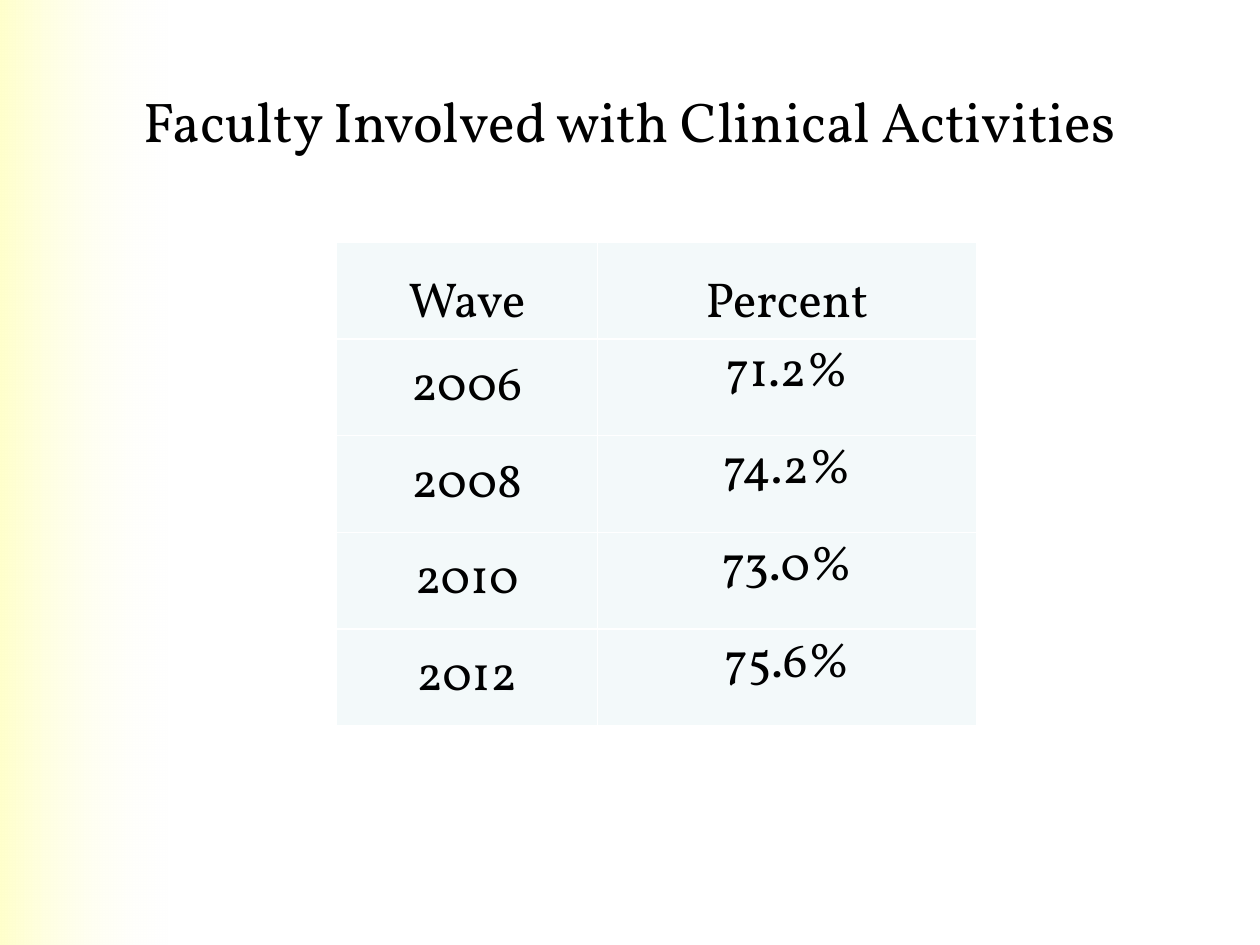
from dataclasses import dataclass

from lxml.etree import SubElement
from pptx import Presentation
from pptx.dml.color import RGBColor
from pptx.enum.shapes import MSO_SHAPE
from pptx.enum.text import MSO_ANCHOR, PP_ALIGN
from pptx.oxml.ns import qn
from pptx.util import Cm, Pt


@dataclass(frozen=True)
class Theme:
    font: str = "Vollkorn"
    ink: str = "000000"
    cell: str = "F3F9FA"
    rule: str = "FFFFFF"
    glow: str = "FFFFCC"
    fade: str = "FFFFF4"
    title: int = 32
    body: int = 28


class Page:
    """Draws styled elements on one slide."""

    def __init__(self, slide, theme):
        self.slide = slide
        self.theme = theme

    def label(self, frame, text, size):
        frame.text = text
        line = frame.paragraphs[0]
        line.alignment = PP_ALIGN.CENTER
        line.font.name = self.theme.font
        line.font.size = Pt(size)
        line.font.color.rgb = RGBColor.from_string(self.theme.ink)

    def band(self, left, top, width, height):
        shape = self.slide.shapes.add_shape(
            MSO_SHAPE.RECTANGLE, Cm(left), Cm(top), Cm(width), Cm(height))
        shape.shadow.inherit = False
        shape.line.fill.background()
        shape.fill.gradient()
        shape.fill.gradient_angle = 0
        for stop, color in zip(shape.fill.gradient_stops, (self.theme.glow, self.theme.fade)):
            stop.color.rgb = RGBColor.from_string(color)
        last = list(shape.element.spPr.iter(qn("a:srgbClr")))[-1]
        SubElement(last, qn("a:alpha"), val="0")

    def title(self, text, left, top, width, height):
        frame = self.slide.shapes.add_textbox(
            Cm(left), Cm(top), Cm(width), Cm(height)).text_frame
        frame.word_wrap = True
        frame.vertical_anchor = MSO_ANCHOR.MIDDLE
        self.label(frame, text, self.theme.title)

    def border(self, cell):
        props = cell._tc.get_or_add_tcPr()
        for side in ("lnL", "lnR", "lnT", "lnB"):
            edge = SubElement(props, qn(f"a:{side}"), w=str(Pt(1)))
            fill = SubElement(edge, qn("a:solidFill"))
            SubElement(fill, qn("a:srgbClr"), val=self.theme.rule)

    def table(self, rows, left, top, widths, height):
        table = self.slide.shapes.add_table(
            len(rows), len(widths), Cm(left), Cm(top),
            Cm(sum(widths)), Cm(height * len(rows))).table
        table.first_row = table.horz_banding = False
        for column, width in zip(table.columns, widths):
            column.width = Cm(width)
        for r, row in enumerate(rows):
            anchors = (MSO_ANCHOR.MIDDLE, MSO_ANCHOR.TOP) if r else (MSO_ANCHOR.BOTTOM,) * 2
            for c, (text, anchor) in enumerate(zip(row, anchors)):
                cell = table.cell(r, c)
                cell.margin_left = cell.margin_right = cell.margin_top = Cm(0.03)
                cell.margin_bottom = 0
                cell.vertical_anchor = anchor
                self.border(cell)
                cell.fill.solid()
                cell.fill.fore_color.rgb = RGBColor.from_string(self.theme.cell)
                self.label(cell.text_frame, text, self.theme.body)


def main():
    deck = Presentation()
    deck.slide_width, deck.slide_height = Cm(25.4), Cm(19.05)
    page = Page(deck.slides.add_slide(deck.slide_layouts[6]), Theme())
    page.band(0, 0, 3.38, 19.05)
    page.title("Faculty Involved with Clinical Activities", 1.27, 0.84, 22.86, 3.18)
    waves = [
        ("Wave", "Percent"),
        ("2006", "71.2%"),
        ("2008", "74.2%"),
        ("2010", "73.0%"),
        ("2012", "75.6%"),
    ]
    page.table(waves, 6.78, 4.88, (5.26, 7.65), 1.95)
    deck.save("out.pptx")


if __name__ == "__main__":
    main()
